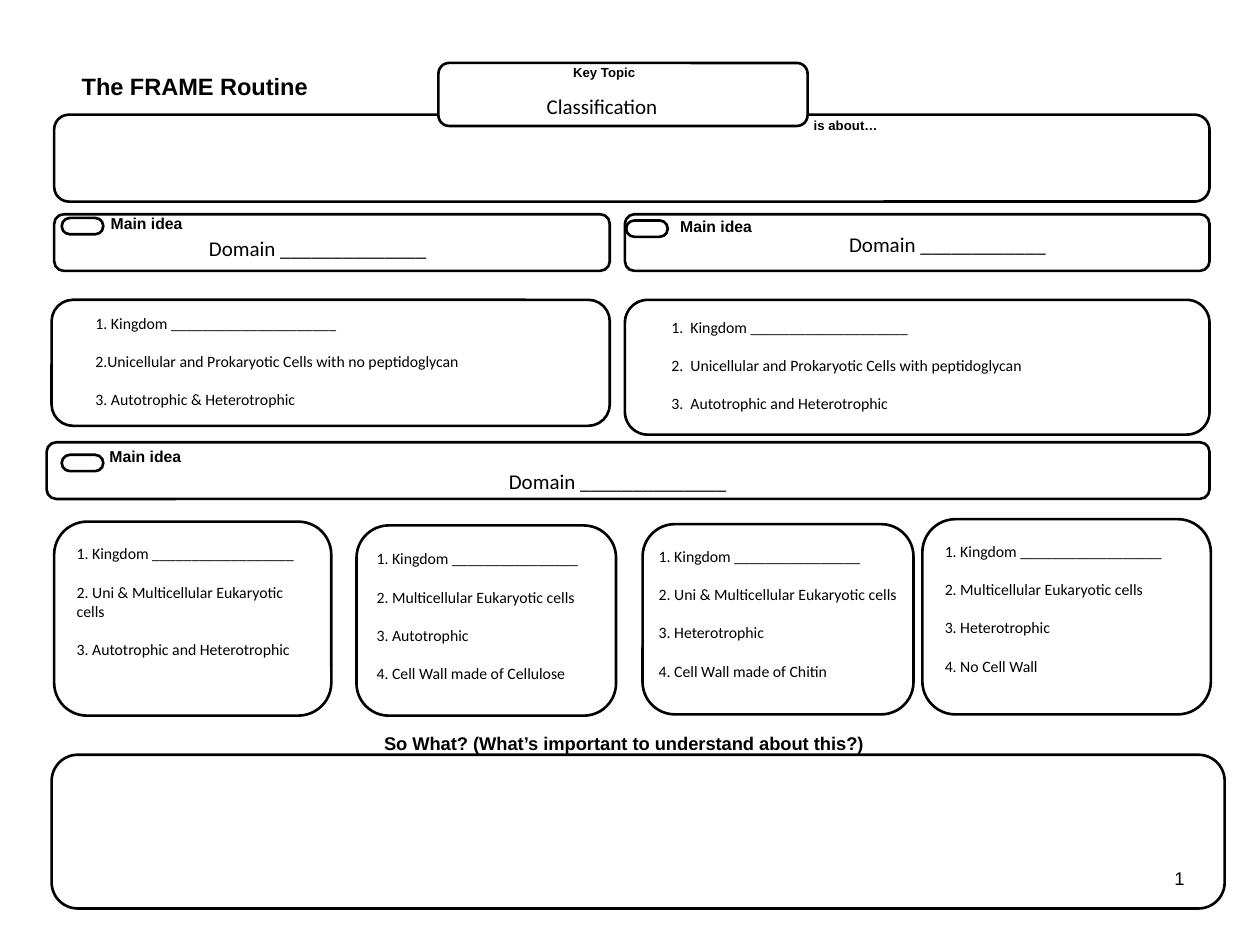
"""Build the FRAME Routine slide on biological classification."""
from pptx import Presentation
from pptx.dml.color import RGBColor
from pptx.enum.shapes import MSO_SHAPE as SHAPE
from pptx.enum.text import PP_ALIGN as ALIGN
from pptx.util import Inches, Pt


def color(value):
    return RGBColor.from_string(value)


def add_text(text, x, y, w, h, size=9, font="Calibri", bold=False,
             wrap=True, align=ALIGN.LEFT, gap=0):
    tf = s.shapes.add_textbox(Inches(x), Inches(y), Inches(w), Inches(h)).text_frame
    tf.word_wrap = wrap
    tf.text = text
    for p in tf.paragraphs:
        p.alignment = align
        p.space_after = Pt(gap)
        for r in p.runs:
            r.font.name = font
            r.font.size = Pt(size)
            r.font.bold = bold
            r.font.color.rgb = color("000000")


prs = Presentation()
prs.slide_width, prs.slide_height = Inches(10), Inches(7.5)
s = prs.slides.add_slide(prs.slide_layouts[6])

about, so_what = (0.43, 0.91, 9.17, 0.69), (0.41, 5.99, 9.31, 1.22)
key_topic = (3.48, 0.5, 2.93, 0.5)
ideas = [(0.43, 1.7, 4.41, 0.45), (4.96, 1.7, 4.64, 0.45), (0.37, 3.51, 9.23, 0.45)]
details = [(0.41, 2.38, 4.43, 1), (4.96, 2.38, 4.64, 1.07),
           (0.43, 4.14, 2.2, 1.54), (2.83, 4.17, 2.06, 1.51),
           (5.1, 4.16, 2.15, 1.51), (7.32, 4.12, 2.29, 1.55)]
pills = [(x, y, 0.33, 0.13) for x, y in [(0.49, 1.73), (4.97, 1.75), (0.49, 3.61)]]

for box in [about, so_what, key_topic, *ideas, *details, *pills]:
    sp = s.shapes.add_shape(SHAPE.ROUNDED_RECTANGLE, *map(Inches, box))
    sp.shadow.inherit = False
    sp.adjustments[0] = 0.5 if box in pills else 0.17
    sp.line.color.rgb = color("000000")
    sp.line.width = Pt(1.5)
    if box == key_topic:
        sp.fill.solid()
        sp.fill.fore_color.rgb = color("FFFFFF")
    else:
        sp.fill.background()

for text, x, y, w, h, size in [
    ("The FRAME Routine", 0.55, 0.52, 2.02, 0.4, 13.5),
    ("Key Topic", 4.45, 0.46, 0.7, 0.28, 7.5),
    ("is about…", 6.36, 0.88, 0.71, 0.28, 7.5),
    ("Main idea", 0.78, 1.65, 0.78, 0.31, 9),
    ("Main idea", 5.3, 1.67, 0.78, 0.31, 9),
    ("Main idea", 0.77, 3.5, 0.78, 0.31, 9),
    ("So What? (What’s important to understand about this?)", 2.95, 5.76, 4.07, 0.34, 10.5),
]:
    add_text(text, x, y, w, h, size=size, font="Arial", bold=True, wrap=False)

for text, x, y, w in [
    ("Classification", 4.24, 0.69, 1.94),
    ("Domain " + "_" * 14, 1.56, 1.82, 2.24),
    ("Domain " + "_" * 12, 6.64, 1.79, 1.88),
    ("Domain " + "_" * 14, 3.94, 3.67, 2.69),
]:
    add_text(text, x, y, w, 0.3, size=12)

for x, y, w, h, lines in [
    (0.66, 2.44, 4.24, 0.86, [
        "1. Kingdom " + "_" * 21,
        "2.Unicellular and Prokaryotic Cells with no peptidoglycan",
        "3. Autotrophic & Heterotrophic"]),
    (5.23, 2.47, 4.19, 0.86, [
        "1.  Kingdom " + "_" * 20,
        "2.  Unicellular and Prokaryotic Cells with peptidoglycan",
        "3.  Autotrophic and Heterotrophic"]),
    (0.51, 4.27, 2.05, 1.16, [
        "1. Kingdom " + "_" * 18,
        "2. Uni & Multicellular Eukaryotic cells",
        "3. Autotrophic and Heterotrophic"]),
    (2.89, 4.31, 2.11, 1.16, [
        "1. Kingdom " + "_" * 16,
        "2. Multicellular Eukaryotic cells",
        "3. Autotrophic",
        "4. Cell Wall made of Cellulose"]),
    (5.13, 4.29, 2.23, 1.31, [
        "1. Kingdom " + "_" * 16,
        "2. Uni & Multicellular Eukaryotic cells",
        "3. Heterotrophic",
        "4. Cell Wall made of Chitin"]),
    (7.4, 4.25, 2.23, 1.16, [
        "1. Kingdom " + "_" * 18,
        "2. Multicellular Eukaryotic cells",
        "3. Heterotrophic",
        "4. No Cell Wall"]),
]:
    add_text("\n".join(lines), x, y, w, h, gap=11)

add_text("1", 7.17, 6.83, 2.33, 0.52, size=10.5, font="Arial", align=ALIGN.RIGHT)

prs.save("out.pptx")
